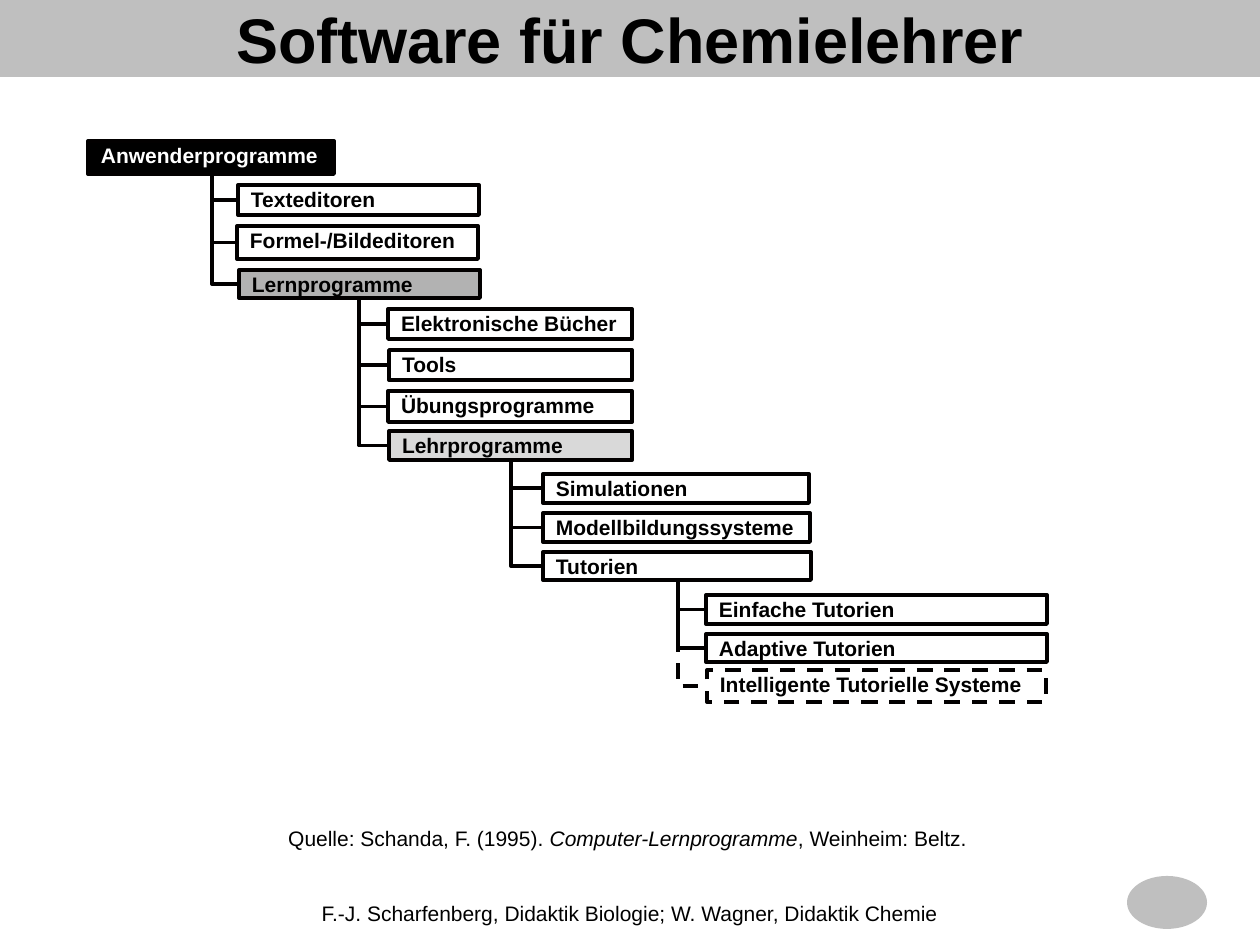
from dataclasses import dataclass

from lxml import etree
from pptx import Presentation
from pptx.dml.color import RGBColor
from pptx.enum import dml, shapes, text
from pptx.oxml import ns
from pptx.util import Pt

PX = 914400 / 126
FONT = "Arial"
BLACK = RGBColor(0, 0, 0)
WHITE = RGBColor(255, 255, 255)
LINE = RGBColor(2, 0, 0)
BANNER = RGBColor(0xBF, 0xBF, 0xBF)
GRAY = RGBColor(0xB2, 0xB2, 0xB2)
LIGHT = RGBColor(0xD9, 0xD9, 0xD9)


@dataclass
class Node:
    label: str
    left: int
    top: int
    width: int
    height: int
    fill: RGBColor | None = None
    color: RGBColor = BLACK
    dashed: bool = False


@dataclass
class Branch:
    x: int
    y: int
    nodes: list[Node]


ROOT = Node("Anwenderprogramme", 88, 141, 246, 33, BLACK, WHITE)
BRANCHES = [
    Branch(212, 175, [
        Node("Texteditoren", 238, 185, 241, 30),
        Node("Formel-/Bildeditoren", 237, 226, 241, 33),
        Node("Lernprogramme", 239, 270, 241, 28, GRAY),
    ]),
    Branch(359, 299, [
        Node("Elektronische Bücher", 388, 309, 244, 30),
        Node("Tools", 389, 350, 243, 30),
        Node("Übungsprogramme", 388, 391, 244, 31),
        Node("Lehrprogramme", 389, 431, 243, 29, LIGHT),
    ]),
    Branch(511, 461, [
        Node("Simulationen", 543, 474, 266, 29),
        Node("Modellbildungssysteme", 543, 513, 267, 29),
        Node("Tutorien", 543, 552, 268, 28),
    ]),
    Branch(678, 581, [
        Node("Einfache Tutorien", 706, 595, 341, 29),
        Node("Adaptive Tutorien", 706, 634, 341, 28),
        Node("Intelligente Tutorielle Systeme", 707, 670, 339, 32, dashed=True),
    ]),
]


def emu(*lengths: float) -> list[int]:
    return [round(length * PX) for length in lengths]


def style_span(span, size: int, color: RGBColor = BLACK, bold: bool = False) -> None:
    span.font.name = FONT
    span.font.size = Pt(size)
    span.font.bold = bold
    span.font.color.rgb = color


def style_line(line, dashed: bool) -> None:
    line.color.rgb = LINE
    line.width = Pt(2.25)
    if dashed:
        line.dash_style = dml.MSO_LINE.DASH


def add_node(page, node: Node) -> None:
    box = page.shapes.add_shape(
        shapes.MSO_SHAPE.RECTANGLE, *emu(node.left, node.top, node.width, node.height))
    box.shadow.inherit = False
    if node.fill is None:
        box.fill.background()
    else:
        box.fill.solid()
        box.fill.fore_color.rgb = node.fill
    style_line(box.line, node.dashed)
    frame = box.text_frame
    frame.word_wrap = True
    frame.vertical_anchor = text.MSO_ANCHOR.TOP
    frame.margin_left, frame.margin_right, frame.margin_top, frame.margin_bottom = emu(13, 13, 2, 1)
    frame.text = node.label
    para = frame.paragraphs[0]
    para.alignment = text.PP_ALIGN.LEFT
    style_span(para.runs[0], 12, node.color, True)


def add_elbow(page, branch: Branch, node: Node) -> None:
    run = node.left - branch.x
    drop = node.top + node.height / 2 - branch.y
    middle_x, middle_y = branch.x + run / 2, branch.y + drop / 2
    elbow = page.shapes.add_connector(
        shapes.MSO_CONNECTOR.ELBOW,
        *emu(middle_x + drop / 2, middle_y - run / 2, middle_x - drop / 2, middle_y + run / 2))
    style_line(elbow.line, node.dashed)
    properties = elbow._element.spPr
    properties.find(ns.qn("a:xfrm")).set("rot", str(270 * 60000))
    properties.find(ns.qn("a:prstGeom")).set("prst", "bentConnector2")
    etree.SubElement(properties, ns.qn("a:effectLst"))


def add_caption(page, area: tuple[int, ...], pieces: list[tuple[str, bool]], anchor) -> None:
    frame = page.shapes.add_textbox(*emu(*area)).text_frame
    frame.word_wrap = True
    frame.vertical_anchor = anchor
    para = frame.paragraphs[0]
    para.alignment = text.PP_ALIGN.CENTER
    for words, italic in pieces:
        span = para.add_run()
        span.text = words
        style_span(span, 12)
        span.font.italic = italic


def add_title(page, words: str) -> None:
    title = page.shapes.title
    title.left, title.top, title.width, title.height = emu(0, 0, 1260, 77)
    title.fill.solid()
    title.fill.fore_color.rgb = BANNER
    frame = title.text_frame
    frame.text = words
    frame.auto_size = text.MSO_AUTO_SIZE.NONE
    frame.vertical_anchor = text.MSO_ANCHOR.MIDDLE
    para = frame.paragraphs[0]
    para.alignment = text.PP_ALIGN.CENTER
    style_span(para.runs[0], 36, bold=True)


def add_emblem(page) -> None:
    emblem = page.shapes.add_shape(shapes.MSO_SHAPE.OVAL, *emu(1127, 876, 80, 53))
    emblem.shadow.inherit = False
    emblem.fill.solid()
    emblem.fill.fore_color.rgb = BANNER
    emblem.line.fill.background()


def main() -> None:
    deck = Presentation()
    deck.slide_width, deck.slide_height = emu(1260, 945)
    page = deck.slides.add_slide(deck.slide_layouts[5])
    add_emblem(page)
    add_title(page, "Software für Chemielehrer")
    add_caption(page, (233, 888, 794, 50), [
        ("F.-J. Scharfenberg, Didaktik Biologie; W. Wagner, Didaktik Chemie", False),
    ], text.MSO_ANCHOR.MIDDLE)
    add_caption(page, (92, 819, 1071, 38), [
        ("Quelle: Schanda, F. (1995). ", False),
        ("Computer-Lernprogramme", True),
        (", Weinheim: Beltz.", False),
    ], text.MSO_ANCHOR.TOP)
    add_node(page, ROOT)
    for branch in BRANCHES:
        for node in branch.nodes:
            add_node(page, node)
            add_elbow(page, branch, node)
    deck.save("out.pptx")


if __name__ == "__main__":
    main()
